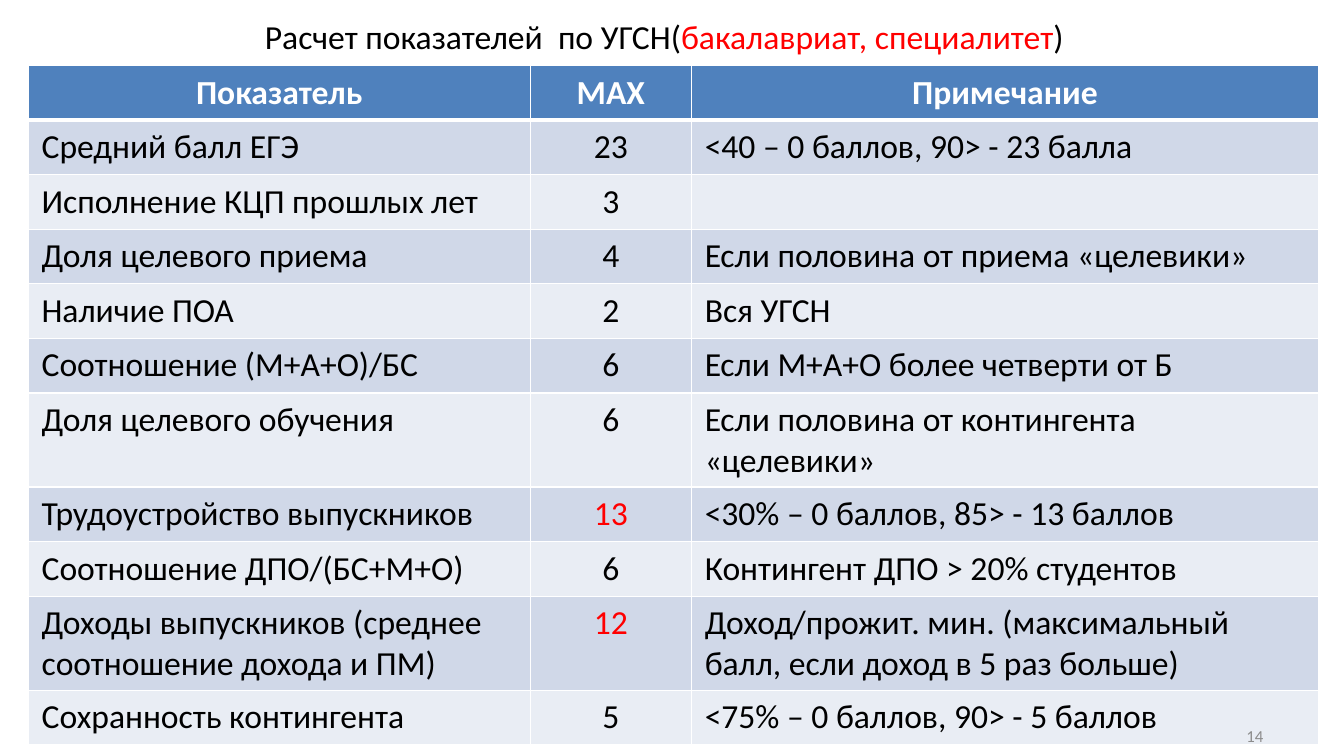
from lxml import etree
from pptx import Presentation
from pptx.dml.color import RGBColor
from pptx.enum.text import MSO_ANCHOR as Anchor, PP_ALIGN as Align
from pptx.oxml.ns import qn
from pptx.util import Pt

BLACK = RGBColor(0x00, 0x00, 0x00)
WHITE = RGBColor(0xFF, 0xFF, 0xFF)
RED = RGBColor(0xFF, 0x00, 0x00)
GRAY = RGBColor(0x8C, 0x8C, 0x8C)
HEADER_BLUE = RGBColor(0x4F, 0x81, 0xBD)
BANDS = (RGBColor(0xD0, 0xD8, 0xE8), RGBColor(0xE9, 0xED, 0xF4))

HEADINGS = ("Показатель", "МАХ", "Примечание")
INDICATORS = (
    ("Средний балл ЕГЭ", "23", "<40 – 0 баллов, 90> - 23 балла"),
    ("Исполнение КЦП прошлых лет", "3", ""),
    ("Доля целевого приема", "4", "Если половина от приема «целевики»"),
    ("Наличие ПОА", "2", "Вся УГСН"),
    ("Соотношение (М+А+О)/БС", "6", "Если М+А+О более четверти от Б"),
    ("Доля целевого обучения", "6", "Если половина от контингента «целевики»"),
    ("Трудоустройство выпускников", "13", "<30% – 0 баллов, 85> - 13 баллов"),
    ("Соотношение ДПО/(БС+М+О)", "6", "Контингент ДПО > 20% студентов"),
    ("Доходы выпускников (среднее соотношение дохода и ПМ)", "12",
     "Доход/прожит. мин. (максимальный балл, если доход в 5 раз больше)"),
    ("Сохранность контингента", "5", "<75% – 0 баллов, 90> - 5 баллов"),
)
RED_SCORES = ("13", "12")
COLUMN_WIDTHS = (358.5, 115.2, 447.9)
ROW_HEIGHT, TALL_ROW_HEIGHT = 39, 67
TALL_ROWS = (6, 9)


class SlideBuilder:
    """Holds the text style and the current slide."""

    def __init__(self, page, font="Calibri", size=24):
        self.page, self.font, self.size = page, font, size

    def style(self, span, color, size=None, bold=False):
        span.font.name = self.font
        span.font.size = Pt(size or self.size)
        span.font.color.rgb = color
        span.font.bold = bold

    def text(self, left, top, width, height, parts, align, size=None):
        box = self.page.shapes.add_textbox(Pt(left), Pt(top), Pt(width), Pt(height))
        frame = box.text_frame
        frame.word_wrap = True
        frame.vertical_anchor = Anchor.MIDDLE
        para = frame.paragraphs[0]
        para.alignment = align
        for words, color in parts:
            span = para.add_run()
            span.text = words
            self.style(span, color, size)

    def borders(self, cell, bottom):
        properties = cell._tc.get_or_add_tcPr()
        for side, width in (("L", 1), ("R", 1), ("T", 1), ("B", bottom)):
            line = etree.SubElement(properties, qn(f"a:ln{side}"), w=str(Pt(width)))
            fill = etree.SubElement(line, qn("a:solidFill"))
            etree.SubElement(fill, qn("a:srgbClr"), val=str(WHITE))

    def cell(self, cell, words, fill, color, align, bold=False, bottom=1):
        self.borders(cell, bottom)
        cell.fill.solid()
        cell.fill.fore_color.rgb = fill
        cell.margin_left = cell.margin_right = Pt(9.5)
        cell.margin_top = cell.margin_bottom = Pt(4.8)
        cell.text_frame.text = words
        para = cell.text_frame.paragraphs[0]
        para.alignment = align
        for span in para.runs:
            self.style(span, color, bold=bold)

    def table(self, left, top, headings, rows):
        heights = [TALL_ROW_HEIGHT if number in TALL_ROWS else ROW_HEIGHT
                   for number in range(len(rows) + 1)]
        grid = self.page.shapes.add_table(
            len(heights), len(headings), Pt(left), Pt(top),
            Pt(sum(COLUMN_WIDTHS)), Pt(sum(heights))).table
        for column, width in zip(grid.columns, COLUMN_WIDTHS):
            column.width = Pt(width)
        for row, height in zip(grid.rows, heights):
            row.height = Pt(height)

        # Header row
        for column, words in enumerate(headings):
            self.cell(grid.cell(0, column), words, HEADER_BLUE, WHITE,
                      Align.CENTER, bold=True, bottom=3)

        # Banded rows with centred scores
        for number, row in enumerate(rows):
            for column, words in enumerate(row):
                is_score = column == 1
                color = RED if is_score and words in RED_SCORES else BLACK
                align = Align.CENTER if is_score else Align.LEFT
                self.cell(grid.cell(number + 1, column), words,
                          BANDS[number % 2], color, align)


def main():
    deck = Presentation()
    deck.slide_width, deck.slide_height = Pt(960), Pt(540)
    builder = SlideBuilder(deck.slides.add_slide(deck.slide_layouts[6]))

    # Title
    builder.text(70.5, 13.7, 808, 24.5, [
        ("Расчет показателей  по УГСН(", BLACK),
        ("бакалавриат, специалитет", RED),
        (")", BLACK)], Align.CENTER)

    # Indicator table
    builder.table(20.2, 46.8, HEADINGS, INDICATORS)

    # Page number
    builder.text(685.5, 511.2, 224, 28.8, [("14", GRAY)], Align.RIGHT, size=12)

    deck.save("out.pptx")


if __name__ == "__main__":
    main()
